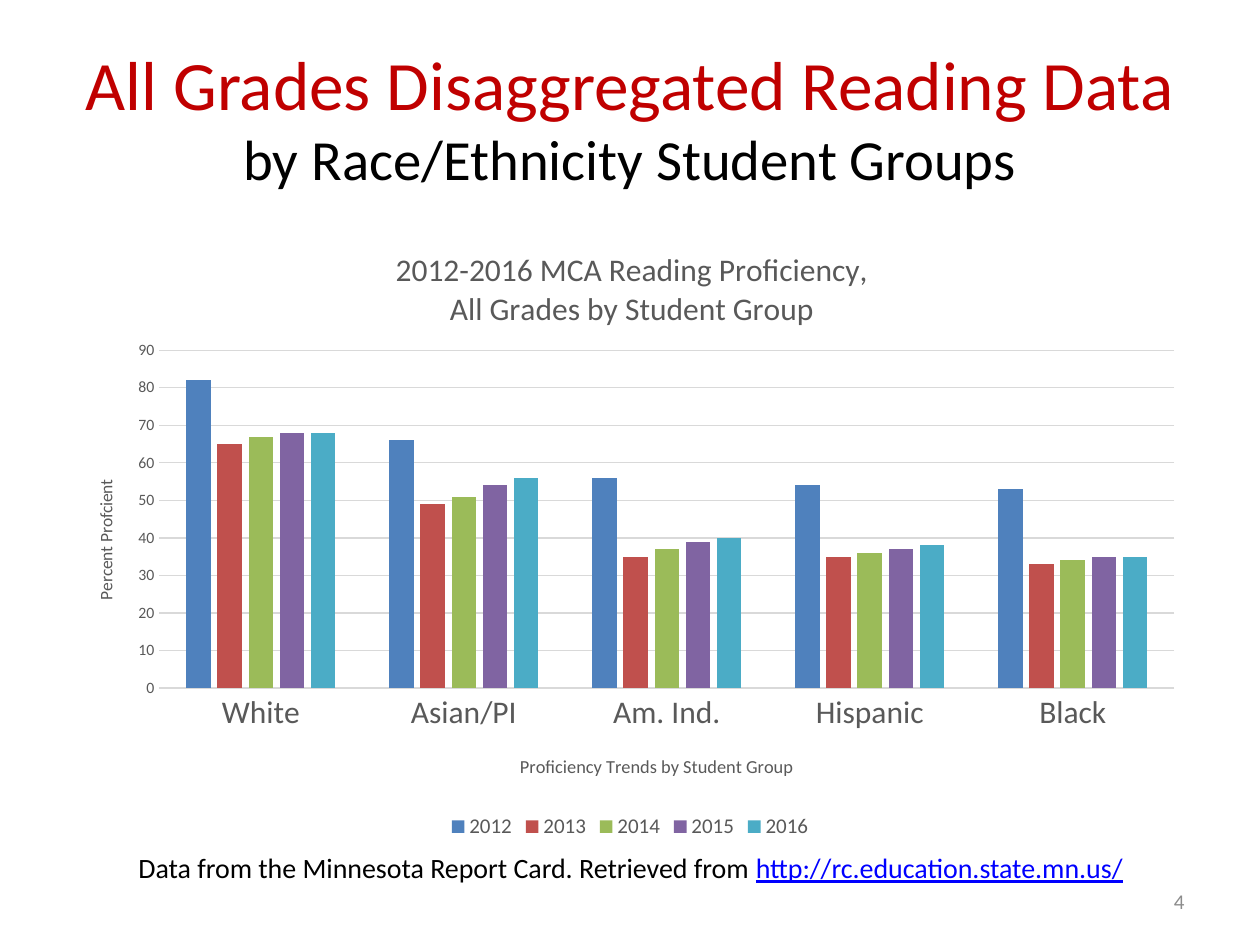
from typing import NamedTuple, Optional

from lxml.etree import SubElement
from pptx import Presentation
from pptx.chart.data import CategoryChartData
from pptx.dml.color import RGBColor
from pptx.enum.chart import XL_CHART_TYPE as ChartType, XL_LEGEND_POSITION as LegendPosition
from pptx.enum.chart import XL_TICK_MARK as TickMark
from pptx.enum.text import MSO_ANCHOR as Anchor, MSO_AUTO_SIZE as AutoSize, PP_ALIGN as Align
from pptx.oxml.ns import qn
from pptx.util import Inches, Pt

FONT = "Calibri"
BLACK = RGBColor(0x00, 0x00, 0x00)
RED = RGBColor(0xC0, 0x00, 0x00)
LINK_BLUE = RGBColor(0x00, 0x00, 0xFF)
NUMBER_GRAY = RGBColor(0x8C, 0x8C, 0x8C)
CHART_GRAY = RGBColor(0x59, 0x59, 0x59)
GRID_GRAY = RGBColor(0xD9, 0xD9, 0xD9)


class Span(NamedTuple):
    text: str
    size: float
    color: RGBColor
    underline: Optional[bool] = None


class Area(NamedTuple):
    left: float
    top: float
    width: float
    height: float


class Year(NamedTuple):
    name: str
    color: RGBColor
    values: tuple


GROUPS = ["White", "Asian/PI", "Am. Ind.", "Hispanic", "Black"]
YEARS = [
    Year("2012", RGBColor(0x4F, 0x81, 0xBD), (82, 66, 56, 54, 53)),
    Year("2013", RGBColor(0xC0, 0x50, 0x4D), (65, 49, 35, 35, 33)),
    Year("2014", RGBColor(0x9B, 0xBB, 0x59), (67, 51, 37, 36, 34)),
    Year("2015", RGBColor(0x80, 0x64, 0xA2), (68, 54, 39, 37, 35)),
    Year("2016", RGBColor(0x4B, 0xAC, 0xC6), (68, 56, 40, 38, 35)),
]


def inches(area: Area) -> list:
    return [Inches(length) for length in area]


def format_font(font, size: float, color: RGBColor, underline: Optional[bool] = None) -> None:
    formats = {"name": FONT, "size": Pt(size), "bold": False, "underline": underline}
    for name, value in formats.items():
        setattr(font, name, value)
    font.color.rgb = color


def add_span(para, span: Span) -> None:
    run = para.add_run()
    run.text = span.text
    format_font(run.font, span.size, span.color, span.underline)


def add_text(page, area: Area, spans: list, align: Align, anchor: Anchor) -> None:
    frame = page.shapes.add_textbox(*inches(area)).text_frame
    frame.word_wrap = True
    frame.vertical_anchor = anchor
    para = frame.paragraphs[0]
    para.alignment = align
    for span in spans:
        add_span(para, span)


def place(element, index: int, **fractions: float) -> None:
    """Fix a chart part at fractions of the chart's size."""
    for old in element.findall(qn("c:layout")):
        element.remove(old)
    layout = SubElement(element, qn("c:layout"))
    element.insert(index, layout)
    manual = SubElement(layout, qn("c:manualLayout"))
    if "w" in fractions:
        SubElement(manual, qn("c:layoutTarget")).set("val", "inner")
    for key in ("x", "y"):
        SubElement(manual, qn(f"c:{key}Mode")).set("val", "edge")
    for key, value in fractions.items():
        SubElement(manual, qn(f"c:{key}")).set("val", str(value))


def write_chart_title(title, lines: list, size: float, x: float, y: float) -> None:
    frame = title.text_frame
    for number, line in enumerate(lines):
        para = frame.add_paragraph() if number else frame.paragraphs[0]
        add_span(para, Span(line, size, CHART_GRAY))
    place(title._element, 1, x=x, y=y)


def format_axis(axis, size: float) -> None:
    axis.major_tick_mark = axis.minor_tick_mark = TickMark.NONE
    format_font(axis.tick_labels.font, size, CHART_GRAY)


def add_reading_chart(page, area: Area) -> None:
    data = CategoryChartData()
    data.categories = GROUPS
    for year in YEARS:
        data.add_series(year.name, year.values)
    chart = page.shapes.add_chart(ChartType.COLUMN_CLUSTERED, *inches(area), data).chart
    format_font(chart.font, 10, BLACK)

    # Columns
    plot = chart.plots[0]
    plot.gap_width, plot.overlap, plot.vary_by_categories = 219, -27, False
    for series, year in zip(plot.series, YEARS):
        series.format.fill.solid()
        series.format.fill.fore_color.rgb = year.color
    place(chart._chartSpace.chart.plotArea, 0, x=0.085, y=0.208, w=0.895, h=0.542)

    # Axes and gridlines
    groups, percent = chart.category_axis, chart.value_axis
    format_axis(groups, 18)
    format_axis(percent, 9)
    percent.minimum_scale, percent.maximum_scale, percent.major_unit = 0, 90, 10
    percent.has_major_gridlines = True
    percent.format.line.fill.background()
    for line in (groups.format.line, percent.major_gridlines.format.line):
        line.color.rgb = GRID_GRAY
        line.width = Pt(0.75)

    # Titles and legend
    write_chart_title(chart.chart_title,
                      ["2012-2016 MCA Reading Proficiency,", "All Grades by Student Group"],
                      18, 0.29, 0.04)
    write_chart_title(groups.axis_title, ["Proficiency Trends by Student Group"], 10.5, 0.4, 0.85)
    write_chart_title(percent.axis_title, ["Percent Profcient"], 10, 0.025, 0.41)
    chart.has_legend = True
    chart.legend.position = LegendPosition.BOTTOM
    chart.legend.include_in_layout = False
    format_font(chart.legend.font, 12, CHART_GRAY)


def main() -> None:
    deck = Presentation()
    deck.slide_width, deck.slide_height = Inches(10), Inches(7.5)
    page = deck.slides.add_slide(deck.slide_layouts[5])

    # Slide title
    title = page.shapes.title
    title.left, title.top, title.width, title.height = inches(Area(0.5, 0.3, 9, 1.25))
    title.text_frame.auto_size = AutoSize.NONE
    title.text_frame.vertical_anchor = Anchor.MIDDLE
    para = title.text_frame.paragraphs[0]
    para.alignment = Align.CENTER
    add_span(para, Span("All Grades Disaggregated Reading Data", 39.6, RED))
    para.add_line_break()
    add_span(para, Span("by Race/Ethnicity Student Groups", 32.4, BLACK))

    add_reading_chart(page, Area(0.5, 1.75, 9, 4.95))

    # Data credit and page number
    add_text(page, Area(1, 6.7, 8.5, 0.37),
             [Span("Data from the Minnesota Report Card. Retrieved from ", 16, BLACK),
              Span("http://rc.education.state.mn.us/", 16, LINK_BLUE, True)],
             Align.LEFT, Anchor.TOP)
    add_text(page, Area(7.17, 6.95, 2.33, 0.4), [Span("4", 12, NUMBER_GRAY)],
             Align.RIGHT, Anchor.MIDDLE)

    deck.save("out.pptx")


if __name__ == "__main__":
    main()
